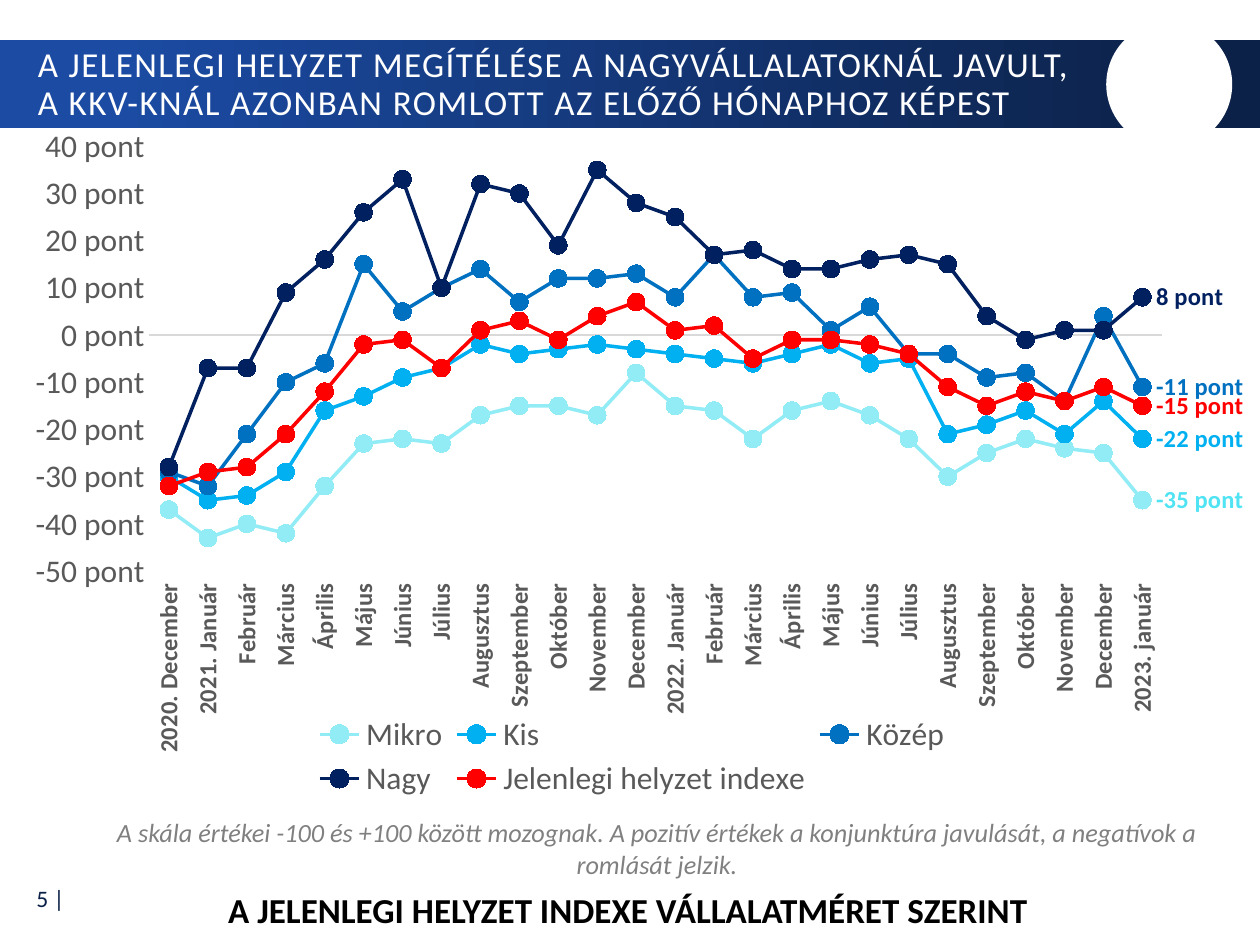
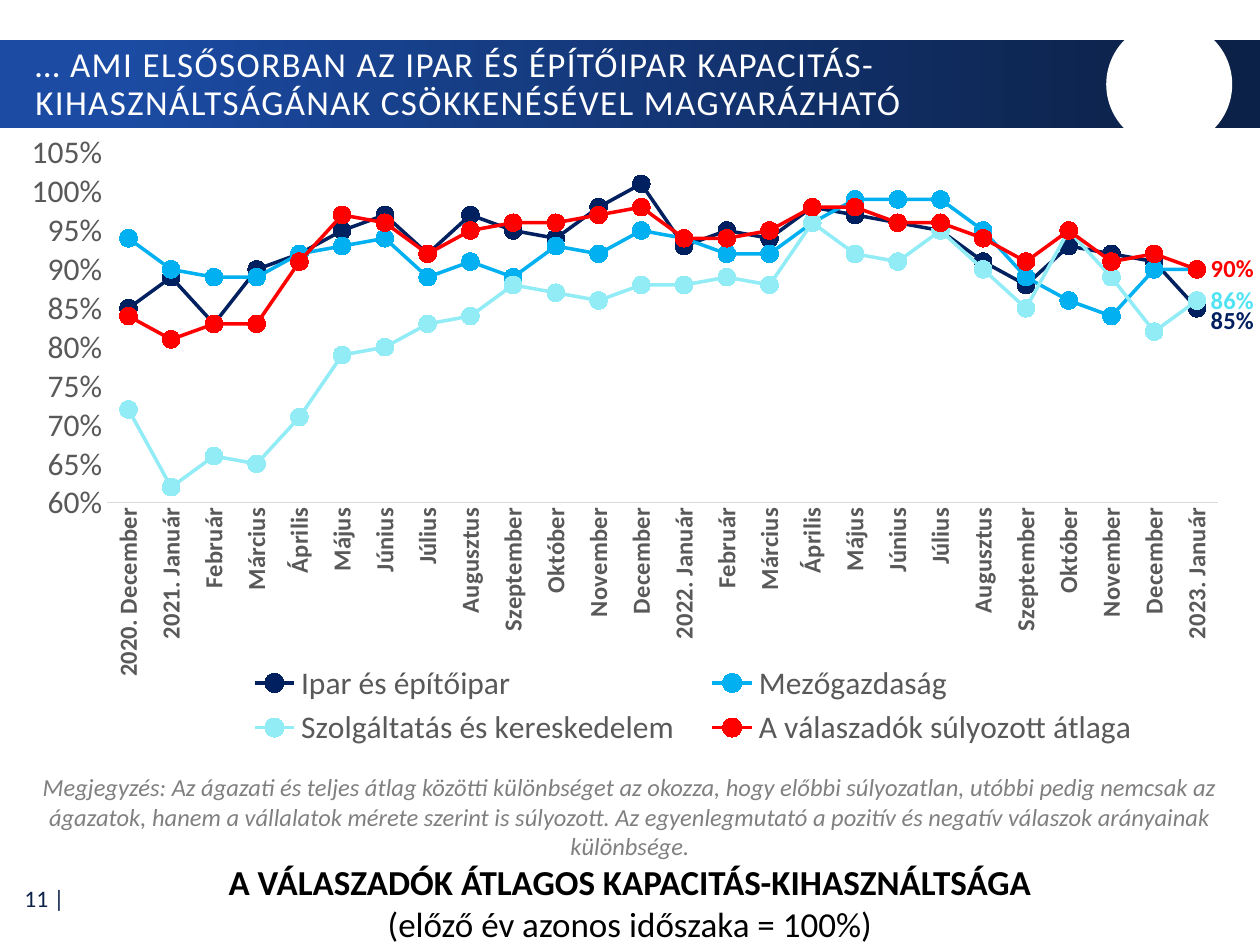
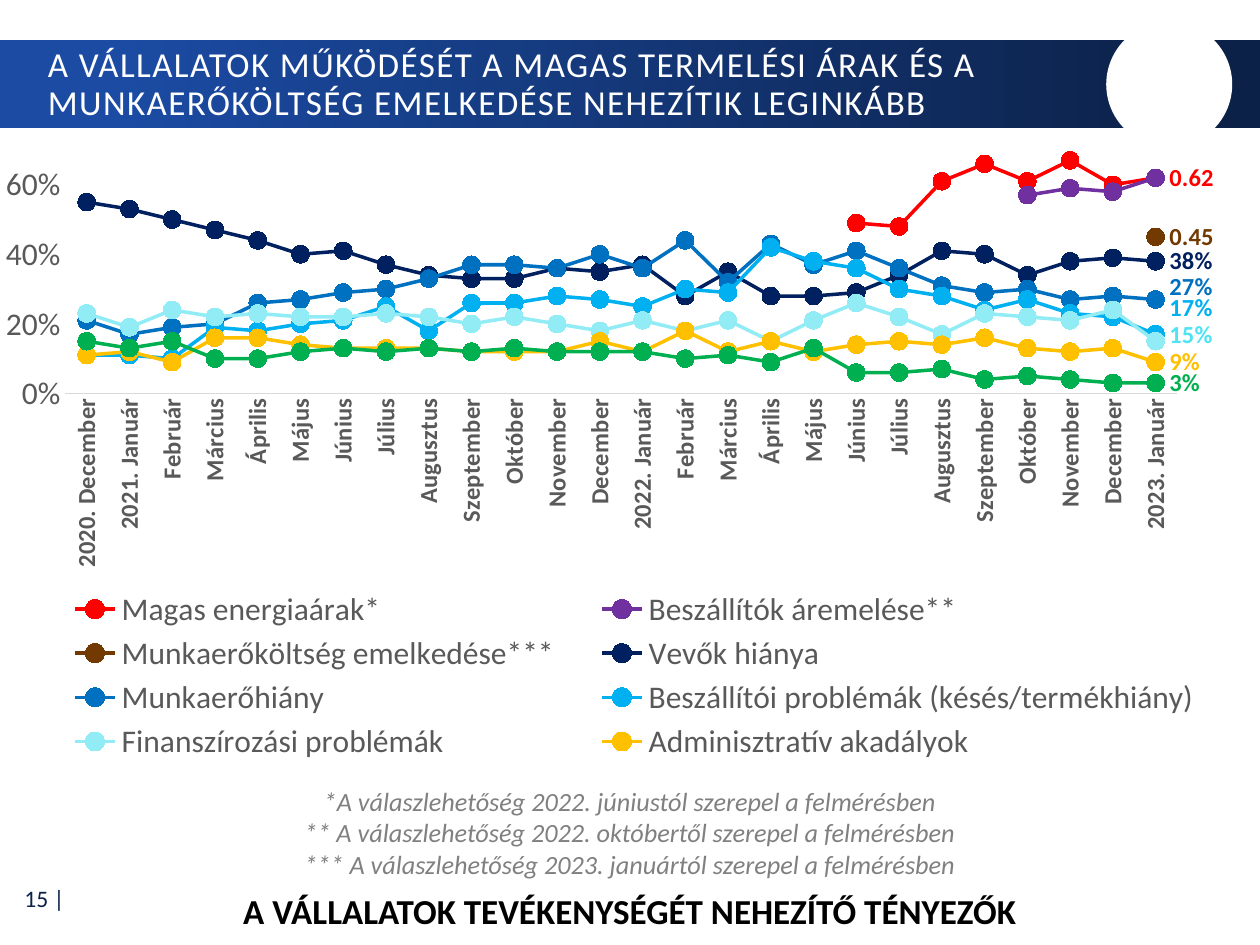
from dataclasses import dataclass
from typing import Optional

from lxml import etree
from pptx import Presentation
from pptx.chart.data import CategoryChartData
from pptx.dml.color import RGBColor
from pptx.enum.chart import XL_CHART_TYPE as ChartType
from pptx.enum.chart import XL_LABEL_POSITION as LabelPosition
from pptx.enum.chart import XL_LEGEND_POSITION as LegendPosition
from pptx.enum.chart import XL_MARKER_STYLE as MarkerStyle
from pptx.enum.chart import XL_TICK_LABEL_POSITION as TickLabelPosition
from pptx.enum.chart import XL_TICK_MARK as TickMark
from pptx.enum.shapes import MSO_SHAPE as ShapeType
from pptx.enum.text import MSO_ANCHOR as Anchor
from pptx.enum.text import MSO_AUTO_SIZE as AutoSize
from pptx.enum.text import PP_ALIGN as Align
from pptx.oxml.ns import qn
from pptx.util import Inches, Pt

FONT = "Calibri"
WHITE, BLACK = "FFFFFF", "000000"
BAND_BLUE, BAND_NAVY = "1B4BA3", "0C2148"
AXIS_GRAY, NOTE_GRAY, LINE_GRAY = "595959", "808080", "D9D9D9"
NAVY, BLUE, SKY, AQUA = "002060", "0070C0", "00B0F0", "92ECF6"
RED, PURPLE, BROWN, GOLD, GREEN = "FF0000", "7030A0", "723900", "FFC000", "00B050"
AQUA_LABEL = "4FE3F3"

MONTHS = ("Január Február Március Április Május Június Július Augusztus "
          "Szeptember Október November December").split()
PERIODS = ["2020. December"]
for year in (2021, 2022):
    PERIODS += [f"{year}. {MONTHS[0]}", *MONTHS[1:]]

Box = tuple[float, float, float, float]


@dataclass(frozen=True)
class Series:
    """Values end at the last period; label_shift is a share of chart height."""
    name: str
    color: str
    values: list[int]
    label_color: Optional[str] = None
    label_format: Optional[str] = None
    label_shift: float = 0
    labelled: bool = True


@dataclass(frozen=True)
class LineChart:
    box: Box
    plot: Box
    legend: Box
    last_period: str
    number_format: str
    minimum: float
    maximum: float
    step: float
    series: list[Series]
    divisor: int = 100


@dataclass(frozen=True)
class Caption:
    box: Box
    lines: list[str]
    size: float
    color: str = BLACK
    bold_lines: int = 0
    italic: bool = False


@dataclass(frozen=True)
class Page:
    number: int
    title: str
    title_box: Box
    captions: list[Caption]
    chart: LineChart


def rgb(color: str) -> RGBColor:
    return RGBColor.from_string(color)


def inches(box: Box) -> list[int]:
    return [Inches(length) for length in box]


def format_font(font, size: float, color: str, bold=False, italic=False) -> None:
    font.name, font.size = FONT, Pt(size)
    font.bold, font.italic = bold, italic
    font.color.rgb = rgb(color)


def write_text(shape, lines: list[str], *, size: float, color: str, bold_lines=0,
               italic=False, align=Align.LEFT, anchor=Anchor.TOP,
               line_spacing: Optional[float] = None, tracking=0) -> None:
    frame = shape.text_frame
    frame.word_wrap = True
    frame.auto_size = AutoSize.NONE
    frame.vertical_anchor = anchor
    for index, line in enumerate(lines):
        paragraph = frame.add_paragraph() if index else frame.paragraphs[0]
        paragraph.alignment = align
        if line_spacing:
            paragraph.line_spacing = line_spacing
        run = paragraph.add_run()
        run.text = line
        format_font(run.font, size, color, index < bold_lines, italic)
        if tracking:
            run._r.get_or_add_rPr().set("spc", str(tracking))


def chart_node(tag: str, **attributes: str):
    node = etree.Element(qn(f"c:{tag}"))
    for name, value in attributes.items():
        node.set(name, value)
    return node


def manual_layout(inner=False, **settings):
    layout = chart_node("layout")
    manual = etree.SubElement(layout, qn("c:manualLayout"))
    if inner:
        manual.append(chart_node("layoutTarget", val="inner"))
    for tag, value in settings.items():
        manual.append(chart_node(tag, val=str(value)))
    return layout


def area_layout(area: Box, inner=False):
    x, y, w, h = area
    return manual_layout(inner, xMode="edge", yMode="edge", x=x, y=y, w=w, h=h)


def remove_layout(parent) -> None:
    for layout in parent.findall(qn("c:layout")):
        parent.remove(layout)


def format_axes(chart, line_chart: LineChart) -> None:
    category_axis, value_axis = chart.category_axis, chart.value_axis
    for axis, size, bold in ((category_axis, 14, True), (value_axis, 18, False)):
        axis.major_tick_mark = axis.minor_tick_mark = TickMark.NONE
        axis.has_major_gridlines = False
        format_font(axis.tick_labels.font, size, AXIS_GRAY, bold)
    category_axis.tick_label_position = (
        TickLabelPosition.LOW if line_chart.minimum < 0 else TickLabelPosition.NEXT_TO_AXIS)
    category_axis.format.line.color.rgb = rgb(LINE_GRAY)
    category_axis.format.line.width = Pt(0.75)
    body = category_axis._element.find(f"{qn('c:txPr')}/{qn('a:bodyPr')}")
    body.set("rot", "-5400000")
    body.set("vert", "horz")
    value_axis.format.line.fill.background()
    value_axis.minimum_scale = line_chart.minimum
    value_axis.maximum_scale = line_chart.maximum
    value_axis.major_unit = line_chart.step
    value_axis.tick_labels.number_format = line_chart.number_format
    value_axis.tick_labels.number_format_is_linked = False


def label_last_point(line, series: Series, number_format: str) -> None:
    line.data_labels.show_value = False
    label = line.points[len(PERIODS)].data_label
    format_font(label.font, 14, series.label_color or series.color, bold=True)
    label.position = LabelPosition.RIGHT
    for node in line._element.iter(qn("c:dLbl")):
        index = node.find(qn("c:idx"))
        index.addnext(chart_node("numFmt", formatCode=series.label_format or number_format,
                                 sourceLinked="0"))
        if series.label_shift:
            index.addnext(manual_layout(x=0, y=series.label_shift))


def format_series(line, series: Series, number_format: str) -> None:
    line.smooth = False
    line.format.line.color.rgb = rgb(series.color)
    line.format.line.width = Pt(2)
    marker = line.marker
    marker.style, marker.size = MarkerStyle.CIRCLE, 10
    marker.format.fill.solid()
    marker.format.fill.fore_color.rgb = rgb(series.color)
    marker.format.line.color.rgb = rgb(series.color)
    if series.labelled:
        label_last_point(line, series, number_format)


def format_legend(chart, line_chart: LineChart) -> None:
    """Place the legend and list only the series that have a name."""
    chart.has_legend = True
    chart.legend.position = LegendPosition.BOTTOM
    chart.legend.include_in_layout = False
    format_font(chart.legend.font, 18, AXIS_GRAY)
    legend = chart.legend._element
    remove_layout(legend)
    position = legend.find(qn("c:legendPos"))
    position.addnext(area_layout(line_chart.legend))
    for index, series in enumerate(line_chart.series):
        if not series.name:
            entry = chart_node("legendEntry")
            entry.append(chart_node("idx", val=str(index)))
            entry.append(chart_node("delete", val="1"))
            position.addnext(entry)


def add_line_chart(slide, line_chart: LineChart) -> None:
    data = CategoryChartData()
    data.categories = [*PERIODS, line_chart.last_period]
    for series in line_chart.series:
        values = [value / line_chart.divisor for value in series.values]
        missing = [None] * (len(PERIODS) + 1 - len(values))
        data.add_series(series.name, missing + values)
    chart = slide.shapes.add_chart(ChartType.LINE_MARKERS, *inches(line_chart.box), data).chart
    chart.has_title = False
    format_font(chart.font, 18, BLACK)
    plot = chart.plots[0]
    plot.vary_by_categories = False
    format_axes(chart, line_chart)
    for line, series in zip(plot.series, line_chart.series):
        format_series(line, series, line_chart.number_format)
    format_legend(chart, line_chart)
    plot_area = plot._element.getparent()
    remove_layout(plot_area)
    plot_area.insert(0, area_layout(line_chart.plot, inner=True))


def add_title_band(slide) -> None:
    """Place the gradient band and its white disc behind the title."""
    band = slide.shapes.add_shape(ShapeType.RECTANGLE, *inches((0, 0.32, 10, 0.7)))
    band.fill.gradient()
    band.fill.gradient_angle = 0
    stops = ((0.09, BAND_BLUE), (0.95, BAND_NAVY))
    for stop, (position, color) in zip(band.fill.gradient_stops, stops):
        stop.position = position
        stop.color.rgb = rgb(color)
    disc = slide.shapes.add_shape(ShapeType.OVAL, *inches((8.78, 0.17, 1, 1)))
    disc.fill.solid()
    disc.fill.fore_color.rgb = rgb(WHITE)
    for shape in (band, disc):
        shape.shadow.inherit = False
        shape.line.fill.background()
        slide.shapes.title.element.addprevious(shape.element)


def add_page(presentation, page: Page) -> None:
    slide = presentation.slides.add_slide(presentation.slide_layouts[5])
    add_title_band(slide)
    title = slide.shapes.title
    title.left, title.top, title.width, title.height = inches(page.title_box)
    write_text(title, [page.title], size=20, color=WHITE, anchor=Anchor.MIDDLE,
               line_spacing=0.9, tracking=80)
    number = slide.shapes.add_textbox(*inches((0.01, 6.94, 0.6, 0.37)))
    write_text(number, [f"{page.number} |"], size=13.5, color=BAND_NAVY,
               align=Align.RIGHT, anchor=Anchor.MIDDLE)
    for caption in page.captions:
        write_text(slide.shapes.add_textbox(*inches(caption.box)), caption.lines,
                   size=caption.size, color=caption.color, bold_lines=caption.bold_lines,
                   italic=caption.italic, align=Align.CENTER)
    add_line_chart(slide, page.chart)


SITUATION = LineChart(
    (0.03, 1.01, 9.97, 5.37), (0.116, 0.028, 0.806, 0.628), (0.24, 0.86, 0.52, 0.14),
    "2023. január", 'General\\ "pont"', -50, 40, 10, divisor=1, series=[
        Series("Mikro", AQUA, [-37, -43, -40, -42, -32, -23, -22, -23, -17, -15, -15, -17, -8,
                               -15, -16, -22, -16, -14, -17, -22, -30, -25, -22, -24, -25, -35],
               AQUA_LABEL),
        Series("Kis", SKY, [-30, -35, -34, -29, -16, -13, -9, -7, -2, -4, -3, -2, -3,
                            -4, -5, -6, -4, -2, -6, -5, -21, -19, -16, -21, -14, -22]),
        Series("Közép", BLUE, [-29, -32, -21, -10, -6, 15, 5, 10, 14, 7, 12, 12, 13,
                               8, 17, 8, 9, 1, 6, -4, -4, -9, -8, -14, 4, -11]),
        Series("Nagy", NAVY, [-28, -7, -7, 9, 16, 26, 33, 10, 32, 30, 19, 35, 28,
                              25, 17, 18, 14, 14, 16, 17, 15, 4, -1, 1, 1, 8]),
        Series("Jelenlegi helyzet indexe", RED,
               [-32, -29, -28, -21, -12, -2, -1, -7, 1, 3, -1, 4, 7,
                1, 2, -5, -1, -1, -2, -4, -11, -15, -12, -14, -11, -15]),
    ])

CAPACITY = LineChart(
    (0, 1.01, 10, 5.07), (0.085, 0.04, 0.882, 0.548), (0.18, 0.83, 0.74, 0.15),
    "2023. Január", "0%", 0.6, 1.05, 0.05, [
        Series("Ipar és építőipar", NAVY,
               [85, 89, 83, 90, 92, 95, 97, 92, 97, 95, 94, 98, 101,
                93, 95, 94, 98, 97, 96, 95, 91, 88, 93, 92, 91, 85], label_shift=0.02),
        Series("Mezőgazdaság", SKY,
               [94, 90, 89, 89, 92, 93, 94, 89, 91, 89, 93, 92, 95,
                94, 92, 92, 96, 99, 99, 99, 95, 89, 86, 84, 90, 90], labelled=False),
        Series("Szolgáltatás és kereskedelem", AQUA,
               [72, 62, 66, 65, 71, 79, 80, 83, 84, 88, 87, 86, 88,
                88, 89, 88, 96, 92, 91, 95, 90, 85, 95, 89, 82, 86], AQUA_LABEL),
        Series("A válaszadók súlyozott átlaga", RED,
               [84, 81, 83, 83, 91, 97, 96, 92, 95, 96, 96, 97, 98,
                94, 94, 95, 98, 98, 96, 96, 94, 91, 95, 91, 92, 90]),
    ])

OBSTACLES = LineChart(
    (0, 1.01, 9.97, 5.18), (0.052, 0.035, 0.885, 0.373), (0.03, 0.7, 0.95, 0.28),
    "2023. Január", "0%", 0, 0.7, 0.1, [
        Series("Magas energiaárak*", RED, [49, 48, 61, 66, 61, 67, 60, 62], labelled=False),
        Series("Beszállítók áremelése**", PURPLE, [57, 59, 58, 62], RED, "General"),
        Series("Munkaerőköltség emelkedése***", BROWN, [45], label_format="General"),
        Series("Vevők hiánya", NAVY, [55, 53, 50, 47, 44, 40, 41, 37, 34, 33, 33, 36, 35,
                                      37, 28, 35, 28, 28, 29, 34, 41, 40, 34, 38, 39, 38]),
        Series("Munkaerőhiány", BLUE, [21, 17, 19, 20, 26, 27, 29, 30, 33, 37, 37, 36, 40,
                                       36, 44, 32, 43, 37, 41, 36, 31, 29, 30, 27, 28, 27],
               label_shift=-0.02),
        Series("Beszállítói problémák (késés/termékhiány)", SKY,
               [11, 11, 10, 19, 18, 20, 21, 25, 18, 26, 26, 28, 27,
                25, 30, 29, 42, 38, 36, 30, 28, 24, 27, 23, 22, 17], label_shift=-0.04),
        Series("Finanszírozási problémák", AQUA,
               [23, 19, 24, 22, 23, 22, 22, 23, 22, 20, 22, 20, 18,
                21, 18, 21, 15, 21, 26, 22, 17, 23, 22, 21, 24, 15],
               AQUA_LABEL, label_shift=-0.01),
        Series("Adminisztratív akadályok", GOLD,
               [11, 12, 9, 16, 16, 14, 13, 13, 13, 12, 12, 12, 15,
                12, 18, 12, 15, 12, 14, 15, 14, 16, 13, 12, 13, 9]),
        Series("", GREEN, [15, 13, 15, 10, 10, 12, 13, 12, 13, 12, 13, 12, 12,
                           12, 10, 11, 9, 13, 6, 6, 7, 4, 5, 4, 3, 3]),
    ])

PAGES = [
    Page(5, "A JELENLEGI HELYZET MEGÍTÉLÉSE A NAGYVÁLLALATOKNÁL JAVULT, "
            "A KKV-KNÁL AZONBAN ROMLOTT AZ ELŐZŐ HÓNAPHOZ KÉPEST", (0.2, 0.34, 8.61, 0.67), [
        Caption((0.65, 6.43, 9.13, 0.61),
                ["A skála értékei -100 és +100 között mozognak. A pozitív értékek a "
                 "konjunktúra javulását, a negatívok a romlását jelzik."],
                15, NOTE_GRAY, italic=True),
        Caption((0, 7, 9.97, 0.44), ["A JELENLEGI HELYZET INDEXE VÁLLALATMÉRET SZERINT"],
                20, bold_lines=1),
    ], SITUATION),
    Page(11, "… AMI ELSŐSORBAN AZ IPAR ÉS ÉPÍTŐIPAR KAPACITÁS-KIHASZNÁLTSÁGÁNAK "
             "CSÖKKENÉSÉVEL MAGYARÁZHATÓ", (0.18, 0.34, 8.72, 0.67), [
        Caption((0.97, 6.78, 8.06, 0.77),
                ["A VÁLASZADÓK ÁTLAGOS KAPACITÁS-KIHASZNÁLTSÁGA",
                 "(előző év azonos időszaka = 100%)"], 20, bold_lines=1),
        Caption((0, 6.08, 10, 0.81),
                ["Megjegyzés: Az ágazati és teljes átlag közötti különbséget az okozza, hogy "
                 "előbbi súlyozatlan, utóbbi pedig nemcsak az ágazatok, hanem a vállalatok "
                 "mérete szerint is súlyozott. Az egyenlegmutató a pozitív és negatív válaszok "
                 "arányainak különbsége."], 14, NOTE_GRAY, italic=True),
    ], CAPACITY),
    Page(15, "A VÁLLALATOK MŰKÖDÉSÉT A MAGAS TERMELÉSI ÁRAK ÉS A MUNKAERŐKÖLTSÉG "
             "EMELKEDÉSE NEHEZÍTIK LEGINKÁBB", (0.28, 0.34, 8.75, 0.67), [
        Caption((0, 6.18, 10, 0.86),
                ["*A válaszlehetőség 2022. júniustól szerepel a felmérésben",
                 "** A válaszlehetőség 2022. októbertől szerepel a felmérésben",
                 "*** A válaszlehetőség 2023. januártól szerepel a felmérésben"],
                15, NOTE_GRAY, italic=True),
        Caption((0.97, 7.01, 8.06, 0.44), ["A VÁLLALATOK TEVÉKENYSÉGÉT NEHEZÍTŐ TÉNYEZŐK"],
                20, bold_lines=1),
    ], OBSTACLES),
]


def main() -> None:
    presentation = Presentation()
    presentation.slide_width, presentation.slide_height = Inches(10), Inches(7.5)
    for page in PAGES:
        add_page(presentation, page)
    presentation.save("out.pptx")


if __name__ == "__main__":
    main()
